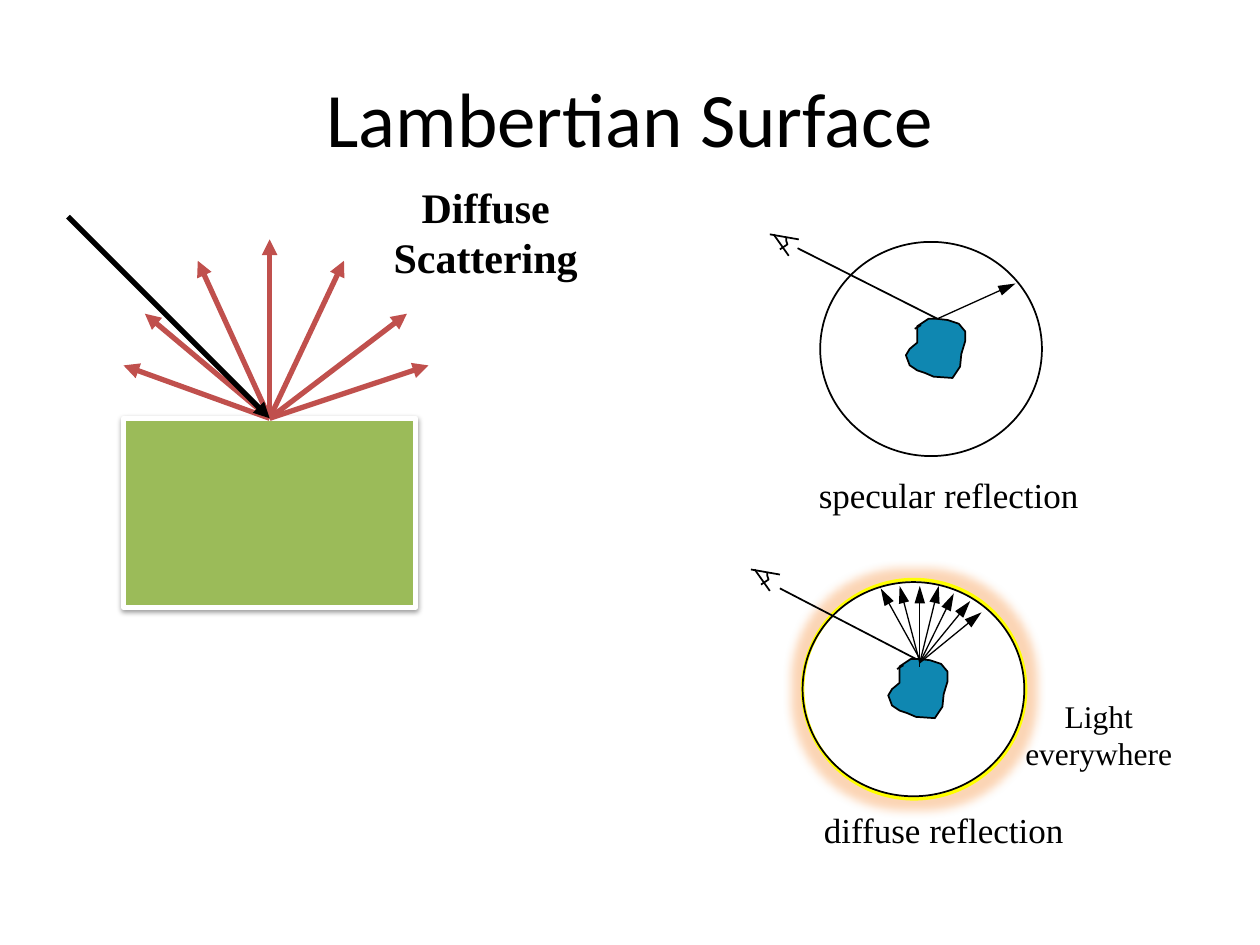
"""Build a slide on Lambertian surfaces: diffuse scattering beside two reflection scenes."""
from dataclasses import dataclass
from typing import Any, Optional

from lxml import etree
from pptx import Presentation, util as u
from pptx.dml.color import RGBColor
from pptx.enum import shapes as kinds, text as styles
from pptx.oxml import ns

Point = tuple[float, float]


@dataclass(frozen=True)
class Theme:
    ink: str = "000000"
    paper: str = "FFFFFF"
    surface: str = "9BBB59"
    scatter: str = "C0504D"
    stone: str = "0F87B1"
    halo: str = "FFFF00"
    glow: str = "F79646"
    heading_font: str = "Calibri"
    label_font: str = "Times New Roman"
    title: float = 44
    heading: float = 24
    caption: float = 20
    note: float = 18
    bold_line: float = 3
    halo_line: float = 2
    outline: float = 1
    ray_line: float = 0.75


@dataclass(frozen=True)
class Label:
    words: str
    box: tuple[float, float, float, float]
    size: float
    font: str
    align: Any = styles.PP_ALIGN.CENTER
    anchor: Any = styles.MSO_ANCHOR.TOP
    bold: bool = False
    wrap: bool = True


@dataclass(frozen=True)
class Scene:
    sphere: Point
    eye: Point
    sight: tuple[Point, Point]
    rays: tuple[tuple[Point, Point], ...]


THEME = Theme()
SPHERE_SIZE = (1.76, 1.7)
STONE = ((0.86, 0.61), (0.77, 0.67), (0.77, 0.8), (0.71, 0.85), (0.68, 0.9),
         (0.71, 0.98), (0.77, 1.02), (0.83, 1.04), (0.9, 1.07), (1.05, 1.08),
         (1.11, 0.99), (1.12, 0.89), (1.15, 0.79), (1.15, 0.71), (1.1, 0.65),
         (1.01, 0.62), (0.92, 0.61))
CREASE = ((0.75, 0.69), (0.8, 0.66))
EYELIDS = (((0, 0), (0.23, 0.04)), ((0.03, 0), (0.15, 0.17)))
IRIS = ((0.13, 0.02), (0.13, 0.05), (0.14, 0.08), (0.08, 0.12))
SCATTER_TIPS = ((2.14, 1.9), (2.73, 2.07), (3.23, 2.49), (3.4, 2.9),
                (1.57, 2.07), (1.15, 2.49), (0.98, 2.9))
HIT = (7.3, 5.26)
DIFFUSE_TIPS = ((7.45, 4.65), (7.57, 4.71), (7.7, 4.77), (7.79, 4.86), (7.14, 4.65))
SCENES = (
    Scene((6.37, 4.62), (5.96, 4.52), ((6.19, 4.67), (7.27, 5.23)),
          (((7.3, 5.29), (7.3, 4.65)), *((HIT, tip) for tip in DIFFUSE_TIPS),
           ((7.3, 5.23), (6.99, 4.67)))),
    Scene((6.51, 1.92), (6.11, 1.86), ((6.33, 1.97), (7.44, 2.53)),
          (((7.44, 2.53), (8.06, 2.25)),)),
)
LABELS = (
    Label("Lambertian Surface", (0.5, 0.3, 9, 1.25), THEME.title, THEME.heading_font,
          anchor=styles.MSO_ANCHOR.MIDDLE),
    Label("Diffuse Scattering", (2.77, 1.39, 2.17, 0.91), THEME.heading,
          THEME.label_font, bold=True),
    Label("specular reflection", (6.4, 3.71, 2.56, 0.44), THEME.caption,
          THEME.label_font, align=styles.PP_ALIGN.LEFT),
    Label("diffuse reflection", (6.44, 6.37, 2.11, 0.44), THEME.caption,
          THEME.label_font, align=styles.PP_ALIGN.LEFT, wrap=False),
    Label("Light everywhere", (8, 5.48, 1.44, 0.71), THEME.note, THEME.label_font),
)


def apply(target: Any, values: dict[str, Any]) -> None:
    for name, value in values.items():
        setattr(target, name, value)


def shift(points: tuple[Point, ...], origin: Point) -> list[Point]:
    return [(x + origin[0], y + origin[1]) for x, y in points]


def paint(shape: Any, fill: Optional[str], line: str, width: float) -> None:
    shape.shadow.inherit = False
    if fill:
        shape.fill.solid()
        shape.fill.fore_color.rgb = RGBColor.from_string(fill)
    else:
        shape.fill.background()
    shape.line.color.rgb = RGBColor.from_string(line)
    shape.line.width = u.Pt(width)


def add_effect(shape: Any, kind: str, color: str, alpha: int, **values: Any) -> None:
    effects = shape._element.spPr.find(ns.qn("a:effectLst"))
    effect = etree.SubElement(effects, ns.qn(kind),
                              {name: str(value) for name, value in values.items()})
    tint = etree.SubElement(effect, ns.qn("a:srgbClr"), val=color)
    etree.SubElement(tint, ns.qn("a:alpha"), val=str(alpha * 1000))


def add_preset(parent: Any, kind: Any, box: tuple[float, ...], fill: Optional[str],
               line: str, width: float) -> Any:
    shape = parent.add_shape(kind, *map(u.Inches, box))
    paint(shape, fill, line, width)
    return shape


def add_line(parent: Any, start: Point, end: Point, color: str = THEME.ink,
             width: float = THEME.outline, head: Optional[str] = None) -> Any:
    line = parent.add_connector(kinds.MSO_CONNECTOR.STRAIGHT,
                                *map(u.Inches, (*start, *end)))
    line.line.color.rgb = RGBColor.from_string(color)
    line.line.width = u.Pt(width)
    if head:
        etree.SubElement(line.line._get_or_add_ln(), ns.qn("a:tailEnd"),
                         type="triangle", w="med", len=head)
    etree.SubElement(line._element.spPr, ns.qn("a:effectLst"))
    return line


def add_outline(parent: Any, points: list[Point], fill: Optional[str] = None) -> None:
    corners = [(u.Inches(x), u.Inches(y)) for x, y in points]
    builder = parent.build_freeform(*corners[0])
    builder.add_line_segments(corners[1:], close=fill is not None)
    paint(builder.convert_to_shape(), fill, THEME.ink, THEME.outline)


def add_label(parent: Any, label: Label) -> None:
    frame = parent.add_textbox(*map(u.Inches, label.box)).text_frame
    apply(frame, {"word_wrap": label.wrap, "vertical_anchor": label.anchor})
    paragraph = frame.paragraphs[0]
    paragraph.alignment = label.align
    run = paragraph.add_run()
    run.text = label.words
    apply(run.font, {"name": label.font, "size": u.Pt(label.size), "bold": label.bold})
    run.font.color.rgb = RGBColor.from_string(THEME.ink)


def add_scattering(parent: Any) -> None:
    block = add_preset(parent, kinds.MSO_SHAPE.RECTANGLE, (0.98, 3.32, 2.32, 1.5),
                       THEME.surface, THEME.paper, THEME.bold_line)
    add_effect(block, "a:outerShdw", THEME.ink, 38, blurRad=u.Pt(3.1), dist=u.Pt(1.6),
               dir=5400000, rotWithShape=0)
    hit = (2.14, 3.32)
    for tip in SCATTER_TIPS:
        ray = add_line(parent, hit, tip, THEME.scatter, THEME.bold_line, head="med")
        ray.begin_connect(block, 0)
    incoming = add_line(parent, (0.54, 1.72), hit, THEME.ink, THEME.bold_line, head="med")
    incoming.end_connect(block, 0)


def add_scene(parent: Any, scene: Scene) -> None:
    group = parent.add_group_shape().shapes
    add_preset(group, kinds.MSO_SHAPE.OVAL, (*scene.sphere, *SPHERE_SIZE),
               None, THEME.ink, THEME.outline)
    add_outline(group, shift(STONE, scene.sphere), THEME.stone)
    add_line(group, *shift(CREASE, scene.sphere))
    add_line(group, *scene.sight)
    for lid in EYELIDS:
        add_line(group, *shift(lid, scene.eye))
    add_outline(group, shift(IRIS, scene.eye))
    for start, tip in scene.rays:
        add_line(group, start, tip, width=THEME.ray_line, head="lg")


def main() -> None:
    deck = Presentation()
    apply(deck, {"slide_width": u.Inches(10), "slide_height": u.Inches(7.5)})
    canvas = deck.slides.add_slide(deck.slide_layouts[6]).shapes
    halo = add_preset(canvas, kinds.MSO_SHAPE.OVAL, (6.37, 4.6, 1.77, 1.74),
                      THEME.paper, THEME.halo, THEME.halo_line)
    add_effect(halo, "a:glow", THEME.glow, 40, rad=u.Pt(11))
    add_scattering(canvas)
    for scene in SCENES:
        add_scene(canvas, scene)
    for label in LABELS:
        add_label(canvas, label)
    deck.save("out.pptx")


if __name__ == "__main__":
    main()
